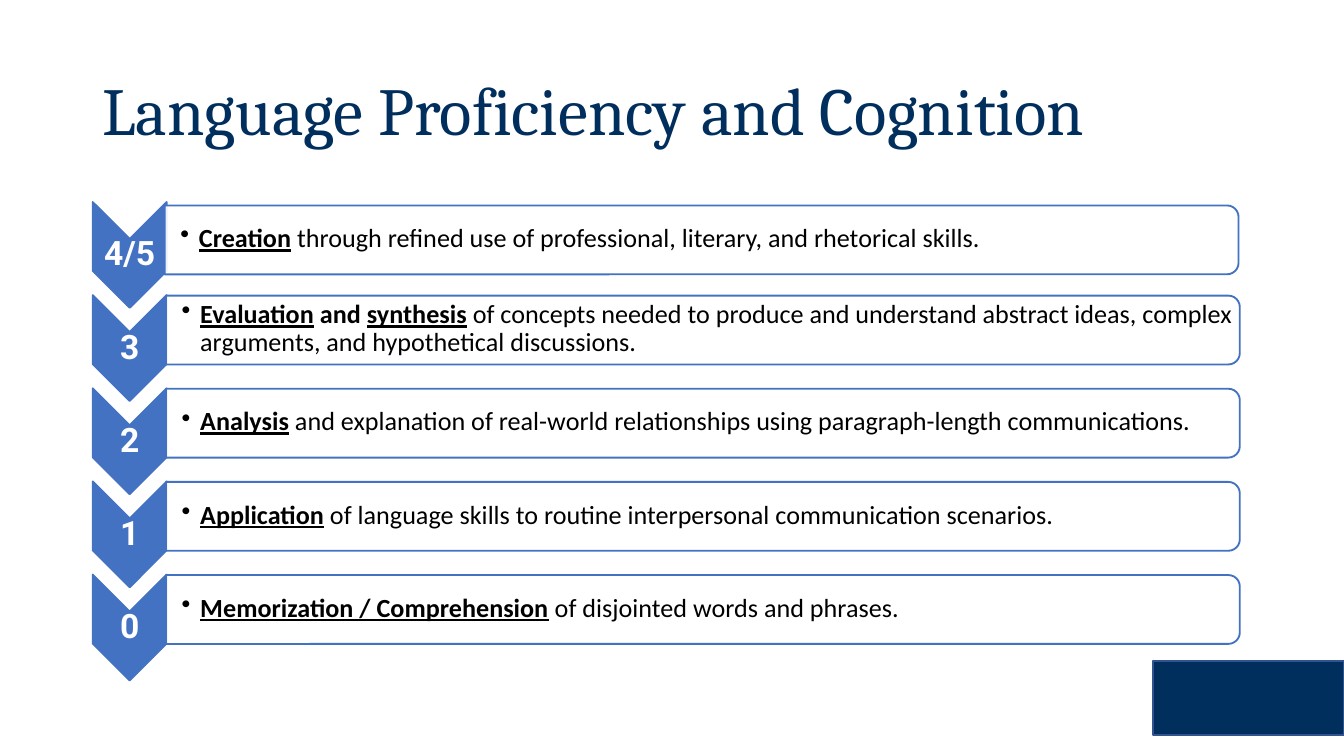
from lxml.etree import SubElement as Sub
from pptx import Presentation
from pptx.dml.color import RGBColor
from pptx.enum.shapes import MSO_SHAPE as Kind
from pptx.enum.text import MSO_ANCHOR as Anchor, PP_ALIGN as Align
from pptx.oxml.ns import qn
from pptx.util import Pt

NAVY = RGBColor(0x00, 0x2E, 0x5D)
EDGE = RGBColor(0x31, 0x53, 0x8F)
BLUE = RGBColor(0x43, 0x72, 0xC3)
WHITE = RGBColor(0xFF, 0xFF, 0xFF)
BLACK = RGBColor(0x00, 0x00, 0x00)

STEP = 49.9
LEVELS = [
    ("4/5", [("Creation", "bu"),
             (" through refined use of professional, literary, and rhetorical skills.", "")]),
    ("3", [("Evaluation", "bu"), (" and ", "b"), ("synthesis", "bu"),
           (" of concepts needed to produce and understand abstract ideas, "
            "complex arguments, and hypothetical discussions.", "")]),
    ("2", [("Analysis", "bu"),
           (" and explanation of real-world relationships using "
            "paragraph-length communications.", "")]),
    ("1", [("Application", "bu"),
           (" of language skills to routine interpersonal communication scenarios.", "")]),
    ("0", [("Memorization / Comprehension", "bu"),
           (" of disjointed words and phrases.", "")]),
]


class Deck:
    """Hold the style and the current slide."""

    def __init__(self):
        self.prs = Presentation()
        self.prs.slide_width, self.prs.slide_height = Pt(720), Pt(405)
        self.slide = self.prs.slides.add_slide(self.prs.slide_layouts[5])

    def style(self, run, face, size, color, bold=False, under=False):
        font = run.font
        font.name, font.size, font.bold, font.underline = face, Pt(size), bold, under
        font.color.rgb = color

    def frame(self, shape, left, top, right, base):
        text = shape.text_frame
        text.word_wrap = True
        text.vertical_anchor = Anchor.MIDDLE
        text.margin_left, text.margin_top = Pt(left), Pt(top)
        text.margin_right, text.margin_bottom = Pt(right), Pt(base)
        para = text.paragraphs[0]
        para.line_spacing = 0.9
        return para

    def title(self, words, box):
        shape = self.slide.shapes.title
        shape.left, shape.top, shape.width, shape.height = map(Pt, box)
        para = self.frame(shape, 5, 3, 5, 3)
        para.text = words
        para.alignment = Align.LEFT
        self.style(para.runs[0], "Cambria", 36, NAVY)

    def shape(self, kind, box, fill, line, turn=0):
        shape = self.slide.shapes.add_shape(kind, *map(Pt, box))
        shape.shadow.inherit = False
        shape.rotation = turn
        shape.fill.solid()
        shape.fill.fore_color.rgb = fill
        shape.line.color.rgb = line
        shape.line.width = Pt(1)
        return shape

    def arrow(self, top):
        shape = self.shape(Kind.CHEVRON, (41.1, top, 56.7, 39.6), BLUE, BLUE, 90)
        shape.adjustments[0] = 0.5

    def label(self, words, top):
        box = self.slide.shapes.add_textbox(Pt(49.7), Pt(top), Pt(39.6), Pt(17.3))
        para = self.frame(box, 0.7, 0.7, 0.7, 0.7)
        para.text = words
        para.alignment = Align.CENTER
        self.style(para.runs[0], "Roboto", 18, WHITE, True)

    def bar(self, left, top):
        wide, high = 575.3, 36.9
        box = (left + (wide - high) / 2, top - (wide - high) / 2, high, wide)
        shape = self.shape(Kind.ROUND_2_SAME_RECTANGLE, box, WHITE, BLUE, 90)
        shape.adjustments[0], shape.adjustments[1] = 0.167, 0
        tint = next(shape.fill._xPr.iter(qn("a:srgbClr")))
        Sub(tint, qn("a:alpha"), val="90000")

    def bullet(self, parts, left, top):
        box = self.slide.shapes.add_textbox(Pt(left), Pt(top), Pt(573.1), Pt(33.1))
        para = self.frame(box, 8, 0.7, 0.7, 0.7)
        para.level = 1
        props = para._p.get_or_add_pPr()
        props.set("marL", str(Pt(10)))
        props.set("indent", str(-Pt(10)))
        Sub(Sub(props, qn("a:buClr")), qn("a:srgbClr"), val=str(BLACK))
        Sub(props, qn("a:buChar"), char="•")
        for words, marks in parts:
            run = para.add_run()
            run.text = words
            self.style(run, "Calibri", 14, BLACK, "b" in marks, "u" in marks)


def main():
    deck = Deck()
    deck.shape(Kind.RECTANGLE, (617.8, 354.2, 102.2, 39.6), NAVY, EDGE)
    deck.title("Language Proficiency and Cognition", (49.7, 21.6, 620.6, 78.5))
    for row, (name, parts) in enumerate(LEVELS):
        drop = row * STEP
        left, top = (89.3, 108.5 + drop) if row else (88.6, 110.1)
        deck.arrow(116.8 + drop)
        deck.label(name, 128 + drop)
        deck.bar(left - 0.4, top)
        deck.bullet(parts, left, top + 1.5)
    deck.prs.save("out.pptx")


if __name__ == "__main__":
    main()
